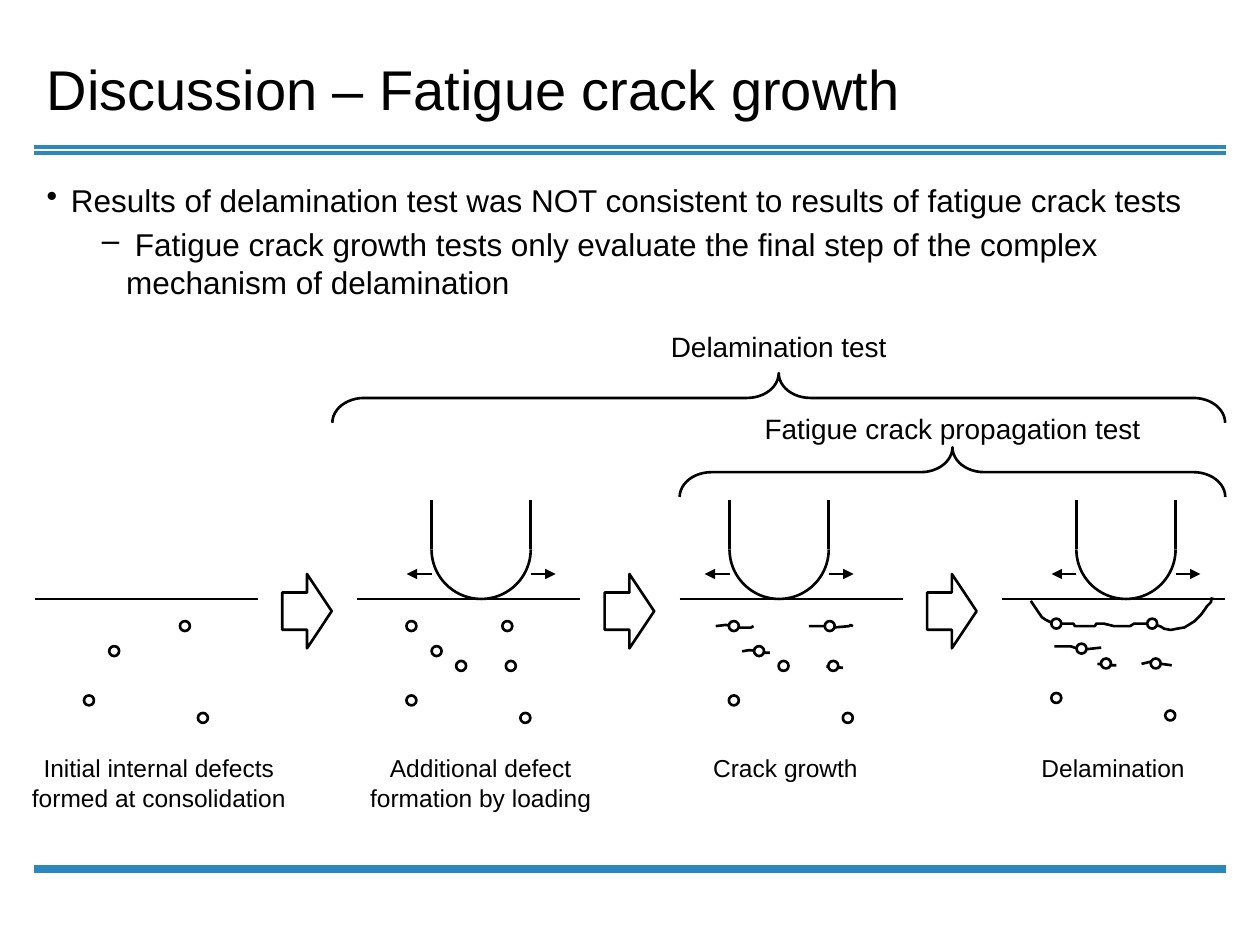
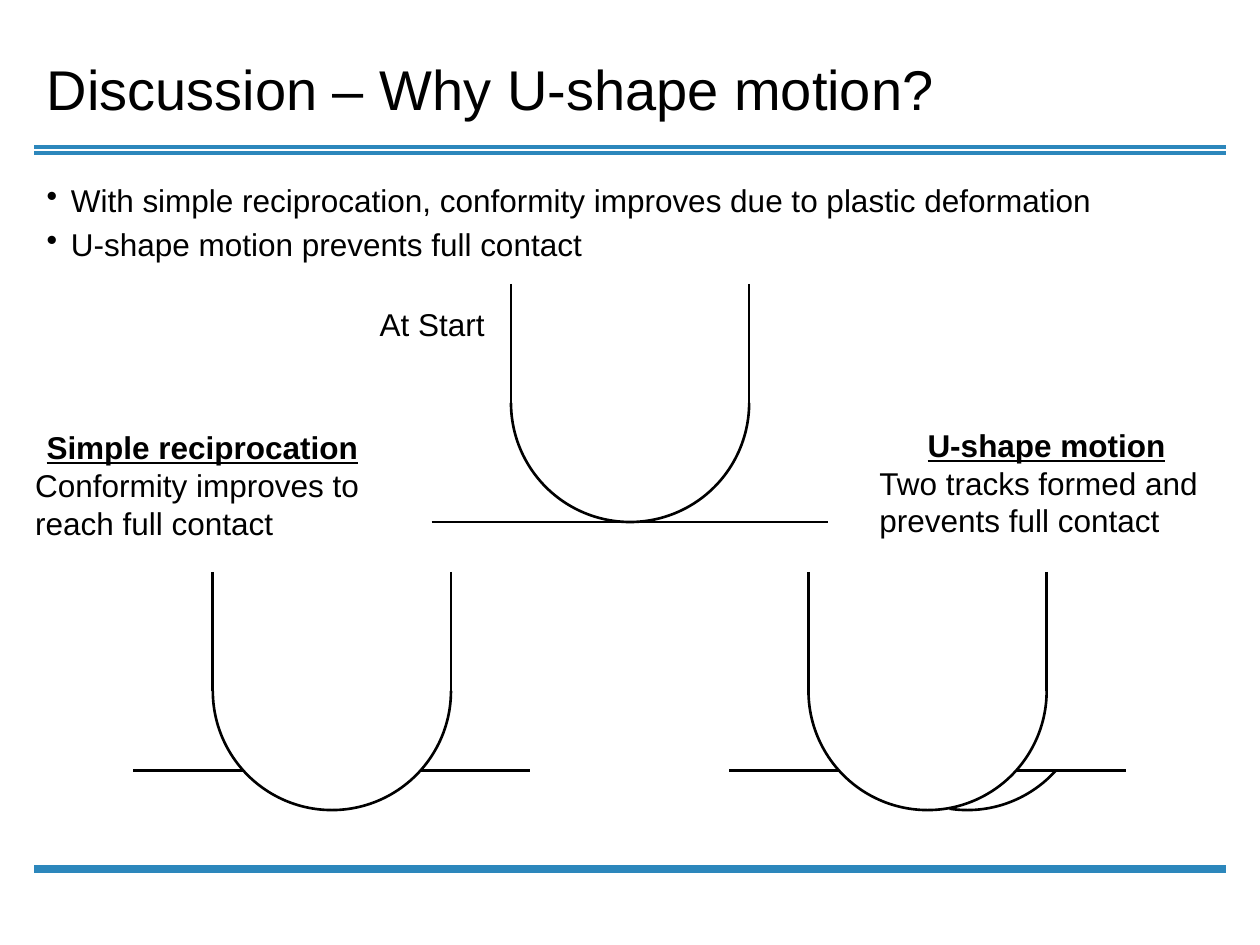
import pptx
import pptx.dml.color
import pptx.enum.shapes
import pptx.enum.text
import pptx.oxml.ns
import pptx.util
from lxml import etree

Pt = pptx.util.Pt
SHAPE = pptx.enum.shapes.MSO_SHAPE
STRAIGHT = pptx.enum.shapes.MSO_CONNECTOR.STRAIGHT
CENTER = pptx.enum.text.PP_ALIGN.CENTER
rgb = pptx.dml.color.RGBColor.from_string
qn = pptx.oxml.ns.qn

BLACK, WHITE, BLUE = "000000", "FFFFFF", "2C87BC"
FONT = "Arial"
LEFT, RIGHT = 19.6, 700.4


def style(sp, color=BLACK, width=1.5, fill=None, arrow=False):
    """Set line, fill and arrowhead of a shape or connector; drop its shadow."""
    if color:
        sp.line.color.rgb = rgb(color)
        sp.line.width = Pt(width)
    else:
        sp.line.fill.background()
    if fill:
        sp.fill.solid()
        sp.fill.fore_color.rgb = rgb(fill)
    elif hasattr(sp, "fill"):
        sp.fill.background()
    if arrow:
        ln = sp._element.spPr.find(qn("a:ln"))
        etree.SubElement(ln, qn("a:tailEnd"), type="triangle")
    etree.SubElement(sp._element.spPr, qn("a:effectLst"))


def add_text(s, box, text, size, align=None):
    tf = s.shapes.add_textbox(*map(Pt, box)).text_frame
    tf.word_wrap = True
    tf.text = text
    for p in tf.paragraphs:
        p.alignment = align
        for r in p.runs:
            r.font.name = FONT
            r.font.size = Pt(size)
            r.font.color.rgb = rgb(BLACK)
    return tf


prs = pptx.Presentation()
prs.slide_width, prs.slide_height = Pt(720), Pt(540)

# Shared frame: rules, title and bulleted body
pages = [
    ("Discussion – Fatigue crack growth", 85, [
        (0, "Results of delamination test was NOT consistent to results of fatigue crack tests"),
        (1, " Fatigue crack growth tests only evaluate the final step of the complex "
            "mechanism of delamination")]),
    ("Discussion – Why U-shape motion?", 42.5, [
        (0, "With simple reciprocation, conformity improves due to plastic deformation"),
        (0, "U-shape motion prevents full contact")]),
]
for title, body_height, bullets in pages:
    s = prs.slides.add_slide(prs.slide_layouts[6])
    for y, color, width in [(85.7, BLUE, 6), (85.7, WHITE, 1.5), (496.6, BLUE, 4.5)]:
        rule = s.shapes.add_connector(STRAIGHT, Pt(LEFT), Pt(y), Pt(RIGHT), Pt(y))
        style(rule, color, width)
    tf = add_text(s, (LEFT, 15.2, 567, 70.5), title, 32)
    tf.vertical_anchor = pptx.enum.text.MSO_ANCHOR.MIDDLE

    tf = add_text(s, (LEFT, 100, 680.8, body_height), "\n".join(t for _, t in bullets), 18)
    for i, (p, (level, _)) in enumerate(zip(tf.paragraphs, bullets)):
        p.level = level
        pPr = p._p.get_or_add_pPr()
        pPr.set("marL", str(Pt(45.4 if level else 13.8)))
        pPr.set("indent", str(Pt(-13.8)))
        etree.SubElement(pPr, qn("a:buChar"), char="–" if level else "•")
        if i:
            p.space_before = Pt(3.6)

growth, motion = prs.slides

# Slide 1: four stages from initial defects to delamination
PITCH, SURFACE_Y, SURFACE_W = 184.25, 342.2, 127.6
stage_x = [19.8 + i * PITCH for i in range(4)]
for x in stage_x:
    surface = growth.shapes.add_connector(
        STRAIGHT, Pt(x), Pt(SURFACE_Y), Pt(x + SURFACE_W), Pt(SURFACE_Y))
    style(surface)

cracks = [
    # Crack growth
    [(462.2, 357.8), (471.6, 357.8), (475.9, 358.6), (485.3, 357.8), (486, 357.1),
     (487.4, 357.8)],
    [(409, 357.8), (414.7, 357.1), (420.5, 357.8), (421.9, 358.6), (429.1, 358.6),
     (430.6, 357.8)],
    [(424.1, 372.2), (428, 371.5), (436.3, 372.2), (437, 373), (439.9, 373)],
    [(472.3, 380.9), (474.5, 380.9), (481.7, 381.6)],
    # Delamination
    [(589, 343.4), (593.5, 350), (595.4, 352.8), (597.6, 354.2), (600.5, 355.7),
     (601.2, 356.4), (613.4, 356.4), (614.2, 357.8), (625.7, 357.8), (626.4, 356.4),
     (630.7, 356.4), (633.6, 357.1), (636.5, 357.8), (645.8, 357.8), (648, 356.4),
     (658.1, 356.4), (663.1, 358), (665.3, 359.3), (669, 360), (672.5, 359.3),
     (676.8, 358.6), (680.4, 356.4), (682.6, 355), (686.2, 351.4), (688.3, 348.5),
     (689.8, 346.3), (691.9, 344.2), (692.6, 341.3)],
    [(602.6, 369.4), (612, 369.4), (616.3, 370.8), (617, 371.5), (622.8, 370.8),
     (629.3, 370.1)],
    [(652.3, 379.4), (658.1, 378), (659.5, 379.4), (663.8, 379.4), (669.6, 380.2)],
    [(627.1, 379.4), (635.8, 380.2), (637.9, 380.2)],
]
for crack in cracks:
    start, *rest = [(Pt(x), Pt(y)) for x, y in crack]
    builder = growth.shapes.build_freeform(*start)
    builder.add_line_segments(rest, close=False)
    style(builder.convert_to_shape())

# The first stage has only the first four defects
defects = [(42.6, 369.2), (83, 354.9), (93.3, 407.4), (28.2, 397.4),
           (85, 377.7), (56.6, 377.7), (28.2, 354.9)]
for stage, x in enumerate(stage_x):
    lift = 1.4 if stage == 3 else 0
    for dx, y in defects[:4 if stage == 0 else 7]:
        defect = growth.shapes.add_shape(
            SHAPE.OVAL, Pt(x + dx), Pt(y - lift), Pt(5.7), Pt(5.7))
        style(defect, fill=WHITE)

for x in stage_x[:3]:
    step = growth.shapes.add_shape(
        SHAPE.RIGHT_ARROW, Pt(x + 141.5), Pt(328), Pt(28.3), Pt(42.5))
    style(step, fill=WHITE)

PUNCH_W = 56.7
punch_x = [246.6, 416.9, 615.1]
for x in punch_x:
    for edge, reach in [(x, -14.2), (x + PUNCH_W, 14.2)]:
        slide_arrow = growth.shapes.add_connector(
            STRAIGHT, Pt(edge), Pt(328), Pt(edge + reach), Pt(328))
        style(slide_arrow, arrow=True)

captions = [
    (5.8, 170, 41, "Initial internal defects\vformed at consolidation"),
    (203.8, 141.8, 41, "Additional defect formation by loading"),
    (374.4, 149, 24.5, "Crack growth"),
    (572.4, 127.4, 24.5, "Delamination"),
]
for x, w, h, caption in captions:
    add_text(growth, (x, 427, w, h), caption, 14, CENTER)

# Braces lie on their side: centre, span, then the label above
braces = [
    (544.3, 269.8, 311.8, 231.8, "Fatigue crack propagation test"),
    (445, 227.4, 510.2, 185, "Delamination test"),
]
for cx, cy, span, label_y, label in braces:
    brace = growth.shapes.add_shape(
        SHAPE.RIGHT_BRACE, Pt(cx - 14.2), Pt(cy - span / 2), Pt(28.4), Pt(span))
    brace.rotation = 270
    brace.adjustments[0] = 0.64
    style(brace)
    add_text(growth, (cx - 156, label_y, 312, 26.6), label, 16, CENTER)

# Slide 2: pin and surface at the start and after each kind of motion
PIN_W = 136.1
pins = [(292, 162.2, 136.1), (121.6, 326.8, 113.4), (462, 326.8, 113.4)]
for x, y, depth in pins:
    surface = motion.shapes.add_connector(
        STRAIGHT, Pt(x - 45.4), Pt(y + depth), Pt(x + 181.4), Pt(y + depth))
    style(surface)
    disc = motion.shapes.add_shape(SHAPE.OVAL, Pt(x), Pt(y), Pt(PIN_W), Pt(PIN_W))
    style(disc, color=None, fill=WHITE)

second_track = motion.shapes.add_shape(
    SHAPE.ARC, Pt(484.7), Pt(326.8), Pt(PIN_W), Pt(PIN_W))
second_track.adjustments[0] = 25.04
second_track.adjustments[1] = 59.12
style(second_track)

add_text(motion, (190, 170.6, 113.8, 28.8), "At Start", 18, CENTER)
notes = [
    (13, 241.2, "Simple reciprocation", "Conformity improves to reach full contact"),
    (495.4, 239.8, "U-shape motion", "Two tracks formed and prevents full contact"),
]
for x, y, heading, finding in notes:
    tf = add_text(motion, (x, y, 205.2, 72.7), f"{heading}\n{finding}", 18)
    p = tf.paragraphs[0]
    p.alignment = CENTER
    p.runs[0].font.bold = True
    p.runs[0].font.underline = True

# U-shaped outlines on both slides: half circle and two straight sides
outlines = [(growth, x, 285.6, PUNCH_W) for x in punch_x]
outlines += [(motion, x, y, PIN_W) for x, y, _ in pins]
for s, x, y, w in outlines:
    tip = s.shapes.add_shape(SHAPE.ARC, Pt(x), Pt(y), Pt(w), Pt(w))
    tip.adjustments[0] = 0
    tip.adjustments[1] = 108
    style(tip)
    for side_x in (x, x + w):
        side = s.shapes.add_connector(
            STRAIGHT, Pt(side_x), Pt(y), Pt(side_x), Pt(y + w / 2))
        style(side)

prs.save("out.pptx")
